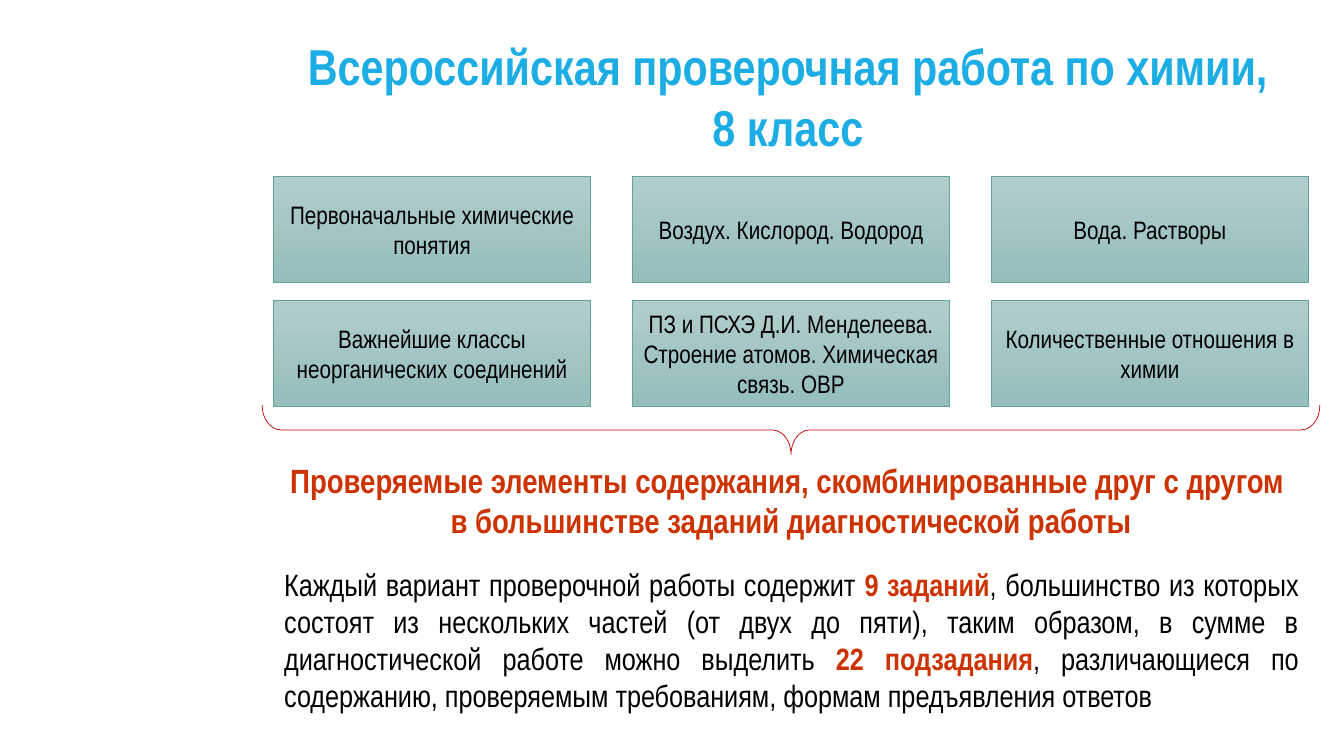
from pptx import Presentation
from pptx.dml.color import RGBColor
from pptx.enum.shapes import MSO_SHAPE
from pptx.enum.text import MSO_ANCHOR, PP_ALIGN
from pptx.util import Inches, Pt

SKY = RGBColor(0x1C, 0xAD, 0xE4)
RUST = RGBColor(0xCC, 0x33, 0x00)
CRIMSON = RGBColor(0xC0, 0x00, 0x00)
BLACK = RGBColor(0x00, 0x00, 0x00)
TEAL_LIGHT = RGBColor(0xB1, 0xCD, 0xCB)
TEAL_DARK = RGBColor(0x95, 0xBE, 0xBC)
TEAL_EDGE = RGBColor(0x62, 0xA3, 0x9F)

TOPICS = [
    ["Первоначальные химические понятия", "Воздух. Кислород. Водород", "Вода. Растворы"],
    ["Важнейшие классы неорганических соединений",
     "ПЗ и ПСХЭ Д.И. Менделеева. Строение атомов. Химическая связь. ОВР",
     "Количественные отношения в химии"],
]


class SlideBuilder:
    """Draws styled elements on the current slide."""

    font_name = "Arial Narrow"
    line_width = Pt(0.5)

    def __init__(self, page):
        self.page = page

    def fill_frame(self, frame, paragraphs, size, align, indent=0):
        frame.word_wrap = True
        for index, spans in enumerate(paragraphs):
            para = frame.paragraphs[0] if index == 0 else frame.add_paragraph()
            para.alignment = align
            if indent:
                para._p.get_or_add_pPr().set("marL", str(Inches(indent)))
            for text, color, bold in spans:
                span = para.add_run()
                span.text = text
                span.font.name = self.font_name
                span.font.size = Pt(size)
                span.font.bold = bold
                span.font.color.rgb = color

    def text(self, left, top, width, height, paragraphs, size, align=PP_ALIGN.CENTER, indent=0):
        box = self.page.shapes.add_textbox(Inches(left), Inches(top), Inches(width), Inches(height))
        self.fill_frame(box.text_frame, paragraphs, size, align, indent)

    def shape(self, kind, left, top, width, height, line_color):
        shape = self.page.shapes.add_shape(
            kind, Inches(left), Inches(top), Inches(width), Inches(height))
        shape.shadow.inherit = False
        shape.line.color.rgb = line_color
        shape.line.width = self.line_width
        return shape

    def topic(self, left, top, width, height, text):
        box = self.shape(MSO_SHAPE.RECTANGLE, left, top, width, height, TEAL_EDGE)
        box.fill.gradient()
        box.fill.gradient_angle = 270
        for stop, color in zip(box.fill.gradient_stops, (TEAL_LIGHT, TEAL_DARK)):
            stop.color.rgb = color
        box.text_frame.vertical_anchor = MSO_ANCHOR.MIDDLE
        self.fill_frame(box.text_frame, [[(text, BLACK, False)]], 18, PP_ALIGN.CENTER)

    def brace(self, left, top, width, height):
        brace = self.shape(MSO_SHAPE.RIGHT_BRACE, left, top, width, height, CRIMSON)
        brace.fill.background()
        brace.rotation = 90
        brace.adjustments[0] = 0.38
        brace.adjustments[1] = 0.5


def main():
    deck = Presentation()
    deck.slide_width, deck.slide_height = Inches(13.33), Inches(7.5)
    builder = SlideBuilder(deck.slides.add_slide(deck.slide_layouts[6]))

    builder.text(2.71, 0.3, 10.02, 1.31, [
        [("Всероссийская проверочная работа по химии, ", SKY, True)],
        [("8 класс", SKY, True)],
    ], 36, indent=0.19)

    for row, topics in enumerate(TOPICS):
        for column, topic in enumerate(topics):
            builder.topic(2.71 + 3.56 * column, 1.75 + 1.23 * row, 3.15, 1.05, topic)

    builder.brace(7.6, -0.98, 0.49, 10.49)

    builder.text(2.71, 4.51, 10.27, 0.91, [
        [("Проверяемые элементы содержания, скомбинированные друг с другом ", RUST, True)],
        [("в большинстве заданий диагностической работы", RUST, True)],
    ], 24)

    builder.text(2.72, 5.56, 10.26, 1.58, [[
        ("Каждый вариант проверочной работы содержит ", BLACK, False),
        ("9 заданий", RUST, True),
        (", большинство из которых состоят из нескольких частей (от двух до пяти), "
         "таким образом, в сумме в диагностической работе можно выделить ", BLACK, False),
        ("22 подзадания", RUST, True),
        (", различающиеся по содержанию, проверяемым требованиям, "
         "формам предъявления ответов", BLACK, False),
    ]], 22, PP_ALIGN.JUSTIFY)

    deck.save("out.pptx")


if __name__ == "__main__":
    main()
